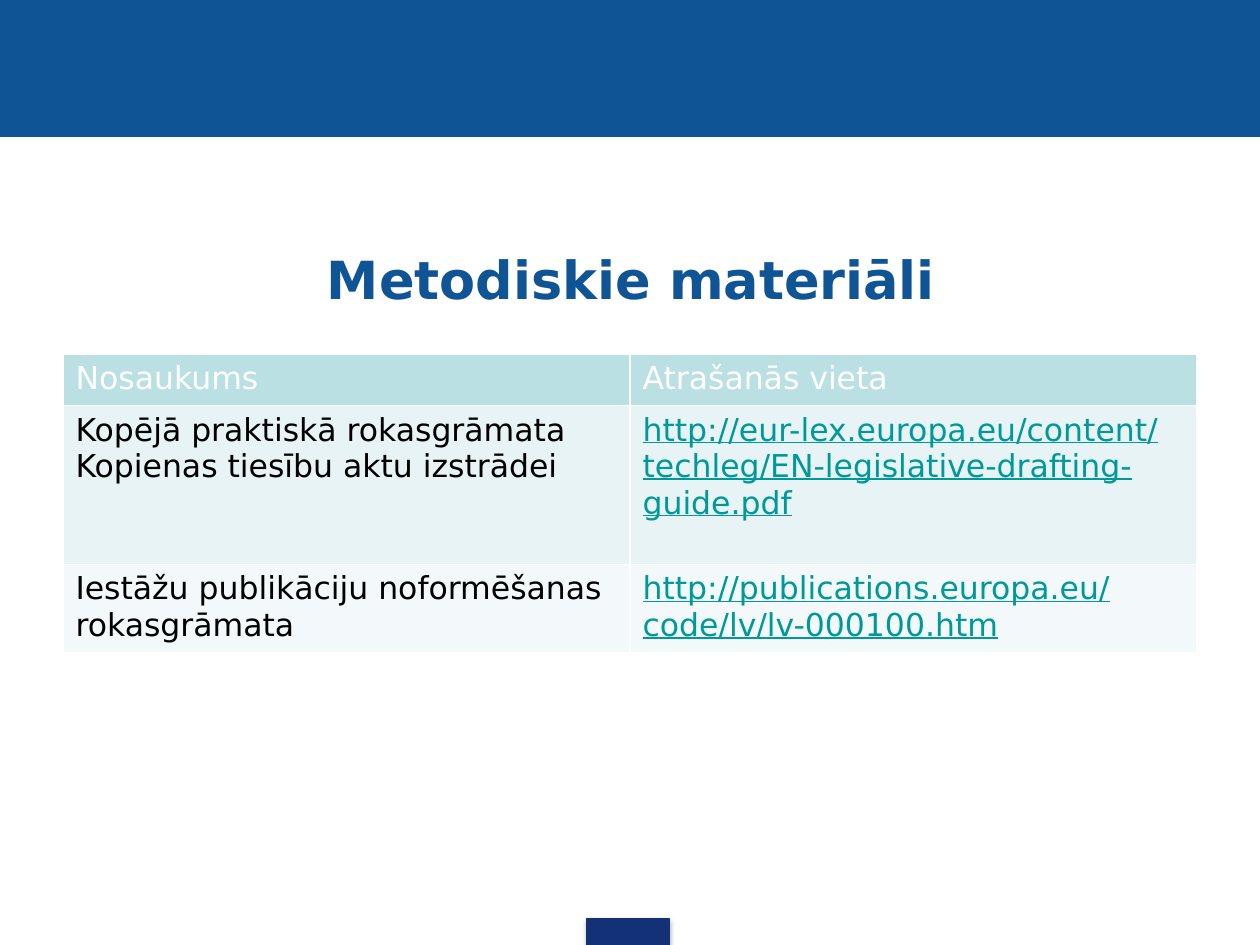
from lxml import etree
from pptx import Presentation
from pptx.dml.color import RGBColor
from pptx.enum.shapes import MSO_SHAPE
from pptx.enum.text import MSO_ANCHOR, PP_ALIGN
from pptx.oxml import parse_xml
from pptx.oxml.ns import nsdecls, qn
from pptx.util import Inches, Pt

COLORS = {
    "banner": "0F5494", "tab": "133176", "white": "FFFFFF", "black": "000000",
    "link": "009999", "header": "BBE0E3", "odd": "E7F3F4", "even": "F3F9FA",
}
FONT = "DejaVu Sans"


def color(name):
    return RGBColor.from_string(COLORS[name])


def set_font(paragraph, size, name, bold=False, underline=False):
    font = paragraph.font
    font.name, font.size, font.bold, font.underline = FONT, Pt(size), bold, underline
    font.color.rgb = color(name)


presentation = Presentation()
presentation.slide_width, presentation.slide_height = Inches(10), Inches(7.5)
slide = presentation.slides.add_slide(presentation.slide_layouts[6])

# Top banner and bottom tab
for name, box in (("banner", (0, 0, 10, 1.08)), ("tab", (4.66, 7.29, 0.65, 0.22))):
    shape = slide.shapes.add_shape(MSO_SHAPE.RECTANGLE, *map(Inches, box))
    shape.shadow.inherit = False
    shape.fill.solid()
    shape.fill.fore_color.rgb = color(name)
    shape.line.color.rgb = color(name)
    shape.line.width = Pt(0.75)

# Soft shadow under the tab, the last shape drawn
effects = shape._element.spPr.find(qn("a:effectLst"))
effects.append(parse_xml(
    f'<a:outerShdw {nsdecls("a")} blurRad="{Pt(3.1)}" dist="{Pt(1.8)}" dir="5400000">'
    '<a:srgbClr val="000000"><a:alpha val="35000"/></a:srgbClr></a:outerShdw>'))

# Title
title = slide.shapes.add_textbox(*map(Inches, (0.51, 1.7, 9, 1.02))).text_frame
title.word_wrap = True
title.vertical_anchor = MSO_ANCHOR.MIDDLE
title.text = "Metodiskie materiāli"
title.paragraphs[0].alignment = PP_ALIGN.CENTER
set_font(title.paragraphs[0], 30, "banner", bold=True)

# Table of materials: fill, text colours by column, row height, texts
rows = [
    ("header", ("white", "white"), 0.41, ("Nosaukums", "Atrašanās vieta")),
    ("odd", ("black", "link"), 1.26,
     ("Kopējā praktiskā rokasgrāmata Kopienas tiesību aktu izstrādei",
      "http://eur-lex.europa.eu/content/techleg/EN-legislative-drafting-guide.pdf")),
    ("even", ("black", "link"), 0.7,
     ("Iestāžu publikāciju noformēšanas rokasgrāmata",
      "http://publications.europa.eu/code/lv/lv-000100.htm")),
]
height = sum(row[2] for row in rows)
table = slide.shapes.add_table(
    len(rows), 2, *map(Inches, (0.5, 2.81, 9, height))).table

for row_index, (fill, text_colors, row_height, texts) in enumerate(rows):
    table.rows[row_index].height = Inches(row_height)
    for column_index, (text, text_color) in enumerate(zip(texts, text_colors)):
        cell = table.cell(row_index, column_index)
        cell.text = text
        set_font(cell.text_frame.paragraphs[0], 18, text_color,
                 underline=text_color == "link")

        # White borders come before the fill in the cell properties
        properties = cell._tc.get_or_add_tcPr()
        for side in ("lnL", "lnR", "lnT", "lnB"):
            border = etree.SubElement(properties, qn(f"a:{side}"), w=str(Pt(1)))
            solid = etree.SubElement(border, qn("a:solidFill"))
            etree.SubElement(solid, qn("a:srgbClr"), val=COLORS["white"])
        cell.fill.solid()
        cell.fill.fore_color.rgb = color(fill)

presentation.save("out.pptx")
